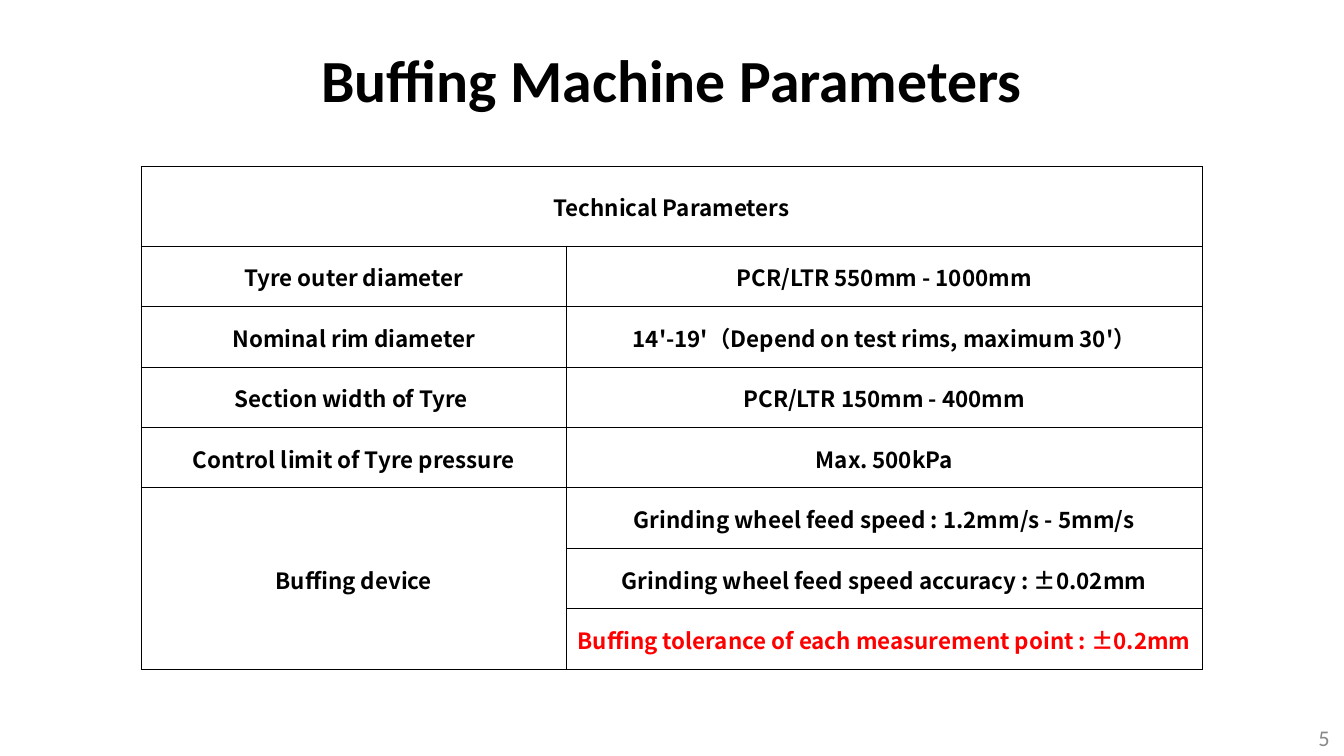
"""Builds the slide with the technical parameters of the buffing machine."""
from dataclasses import dataclass

from lxml import etree
from pptx import Presentation
from pptx.dml.color import RGBColor
from pptx.enum.text import MSO_ANCHOR, PP_ALIGN
from pptx.oxml.ns import qn
from pptx.util import Pt

MIDDLE = MSO_ANCHOR.MIDDLE
CENTER, RIGHT = PP_ALIGN.CENTER, PP_ALIGN.RIGHT
COLORS = {"text": "000000", "alert": "FF0000", "number": "898989", "cell": "FFFFFF", "border": "000000"}
BLANK_LAYOUT = 6
COLUMN_WIDTHS = (228, 340.4)
HEADER_HEIGHT, ROW_HEIGHT = 42.4, 32.4
BORDER_WIDTH = 0.5
CELL_INSET = 0.75


@dataclass(frozen=True)
class Style:
    font: str
    size: float
    color: str = "text"
    bold: bool = True
    align: PP_ALIGN = CENTER
    line_spacing: float = 1.0


@dataclass(frozen=True)
class Label:
    text: str
    left: float
    top: float
    width: float
    height: float
    style: Style


@dataclass(frozen=True)
class Entry:
    text: str
    row: int
    column: int
    row_span: int = 1
    column_span: int = 1
    color: str = "text"


LABELS = (
    Label("Buffing Machine Parameters", 36, -1.4, 648, 67.6, Style("Calibri", 32, line_spacing=1.5)),
    Label("5", 692, 385.2, 27.4, 19.4, Style("Calibri", 12, "number", False, RIGHT)),
)
ENTRIES = (
    Entry("Technical Parameters", 0, 0, column_span=2),
    Entry("Tyre outer diameter", 1, 0),
    Entry("PCR/LTR 550mm - 1000mm", 1, 1),
    Entry("Nominal rim diameter", 2, 0),
    Entry("14'-19'（Depend on test rims, maximum 30'）", 2, 1),
    Entry("Section width of Tyre ", 3, 0),
    Entry("PCR/LTR 150mm - 400mm", 3, 1),
    Entry("Control limit of Tyre pressure", 4, 0),
    Entry("Max. 500kPa", 4, 1),
    Entry("Buffing device", 5, 0, row_span=3),
    Entry("Grinding wheel feed speed : 1.2mm/s - 5mm/s", 5, 1),
    Entry("Grinding wheel feed speed accuracy : ±0.02mm", 6, 1),
    Entry("Buffing tolerance of each measurement point : ±0.2mm", 7, 1, color="alert"),
)


def write(frame, text: str, style: Style) -> None:
    """Write one styled run into the first paragraph of a text frame."""
    para = frame.paragraphs[0]
    para.alignment = style.align
    para.line_spacing = style.line_spacing
    span = para.add_run()
    span.text = text
    span.font.name = style.font
    span.font.size = Pt(style.size)
    span.font.bold = style.bold
    span.font.color.rgb = RGBColor.from_string(COLORS[style.color])
    etree.SubElement(span.font._element, qn("a:ea"), typeface=style.font)


def add_label(page, label: Label) -> None:
    """Add a vertically centred text box."""
    box = page.shapes.add_textbox(Pt(label.left), Pt(label.top), Pt(label.width), Pt(label.height))
    box.text_frame.word_wrap = True
    box.text_frame.vertical_anchor = MIDDLE
    write(box.text_frame, label.text, label.style)


def format_cell(cell) -> None:
    """Give a cell thin borders, a plain fill and tight margins."""
    properties = cell._tc.get_or_add_tcPr()
    for side in ("L", "R", "T", "B"):
        line = etree.SubElement(properties, qn(f"a:ln{side}"), w=str(Pt(BORDER_WIDTH)))
        fill = etree.SubElement(line, qn("a:solidFill"))
        etree.SubElement(fill, qn("a:srgbClr"), val=COLORS["border"])
    cell.fill.solid()
    cell.fill.fore_color.rgb = RGBColor.from_string(COLORS["cell"])
    cell.margin_left = cell.margin_right = cell.margin_top = Pt(CELL_INSET)
    cell.margin_bottom = Pt(0)
    cell.vertical_anchor = MIDDLE


def add_parameters(page, left: float, top: float) -> None:
    """Add the table of machine parameters."""
    heights = [HEADER_HEIGHT] + [ROW_HEIGHT] * 7
    table = page.shapes.add_table(
        len(heights), len(COLUMN_WIDTHS), Pt(left), Pt(top), Pt(sum(COLUMN_WIDTHS)), Pt(sum(heights))
    ).table
    table.first_row = table.horz_banding = False
    for column, width in zip(table.columns, COLUMN_WIDTHS):
        column.width = Pt(width)
    for row, height in zip(table.rows, heights):
        row.height = Pt(height)
    for cell in table.iter_cells():
        format_cell(cell)
    for entry in ENTRIES:
        cell = table.cell(entry.row, entry.column)
        if entry.row_span * entry.column_span > 1:
            cell.merge(table.cell(entry.row + entry.row_span - 1, entry.column + entry.column_span - 1))
        write(cell.text_frame, entry.text, Style("Noto Sans CJK SC", 12, entry.color))


def main() -> None:
    """Build and save the deck."""
    deck = Presentation()
    deck.slide_width, deck.slide_height = Pt(720), Pt(405)
    page = deck.slides.add_slide(deck.slide_layouts[BLANK_LAYOUT])
    for label in LABELS:
        add_label(page, label)
    add_parameters(page, 75.6, 89.4)
    deck.save("out.pptx")


if __name__ == "__main__":
    main()
